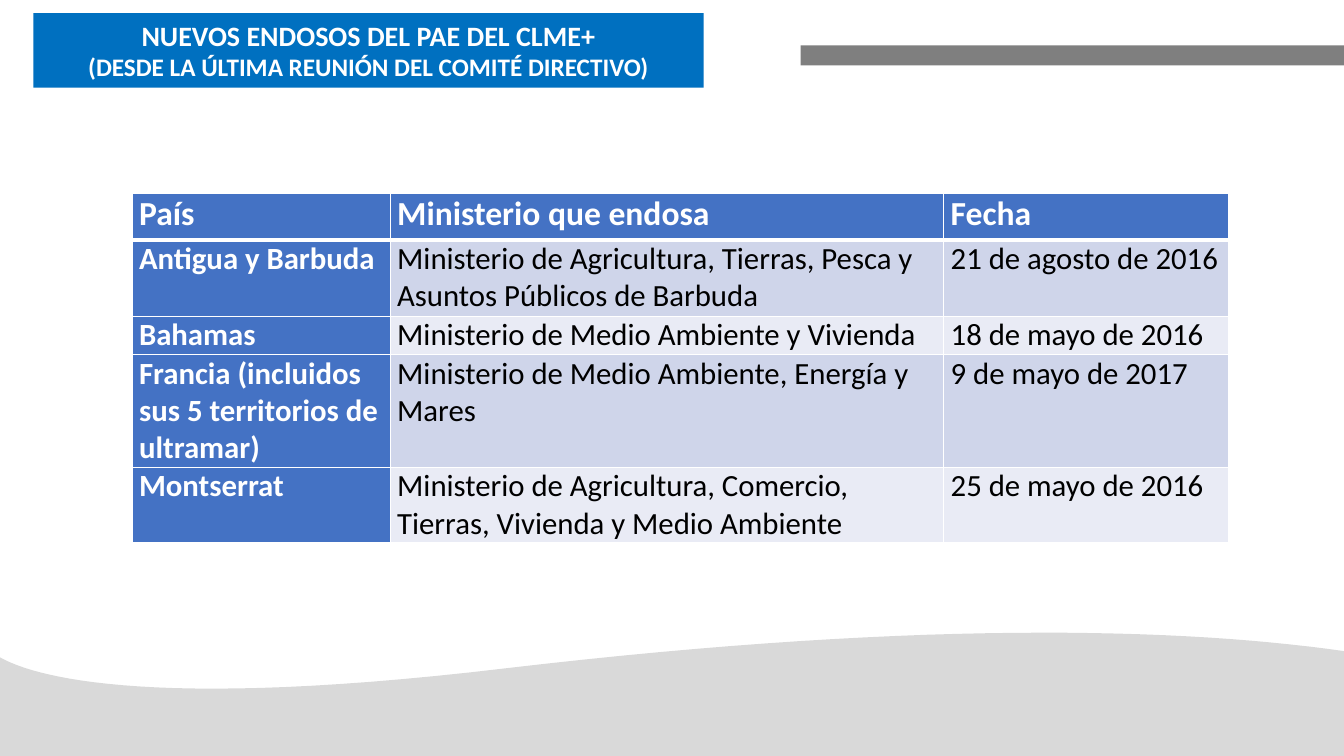
from lxml import etree
from pptx import Presentation
from pptx.dml.color import RGBColor
from pptx.enum.shapes import MSO_SHAPE
from pptx.enum.text import MSO_ANCHOR, PP_ALIGN
from pptx.oxml.ns import qn
from pptx.util import Inches, Pt

TITLE = [("NUEVOS ENDOSOS DEL PAE DEL CLME+", 20),
         ("(DESDE LA ÚLTIMA REUNIÓN DEL COMITÉ DIRECTIVO)", 18)]
ROWS = [
    ("País", "Ministerio que endosa", "Fecha"),
    ("Antigua y Barbuda",
     "Ministerio de Agricultura, Tierras, Pesca y Asuntos Públicos de Barbuda",
     "21 de agosto de 2016"),
    ("Bahamas", "Ministerio de Medio Ambiente y Vivienda", "18 de mayo de 2016"),
    ("Francia (incluidos sus 5 territorios de ultramar)",
     "Ministerio de Medio Ambiente, Energía y Mares", "9 de mayo de 2017"),
    ("Montserrat",
     "Ministerio de Agricultura, Comercio, Tierras, Vivienda y Medio Ambiente",
     "25 de mayo de 2016"),
]
COL_WIDTHS = [2.56, 5.49, 2.83]
ROW_HEIGHTS = [0.46, 0.76, 0.38, 1.12, 0.74]
WAVE_CURVES = [
    [(13.33, 6.46), (11.65, 6.22), (9.02, 6.16), (5.02, 6.63)],
    [(5.02, 6.63), (1.33, 7.07), (0.26, 6.68), (-0.02, 6.51)],
]
WAVE_STEPS = 30

FONT = "Calibri"
WHITE = RGBColor(0xFF, 0xFF, 0xFF)
BLACK = RGBColor(0x00, 0x00, 0x00)
TITLE_BLUE = RGBColor(0x00, 0x70, 0xC0)
TABLE_BLUE = RGBColor(0x44, 0x72, 0xC4)
BANDS = [RGBColor(0xE9, 0xEB, 0xF5), RGBColor(0xCF, 0xD5, 0xEA)]
WAVE_GRAY = RGBColor(0xD9, 0xD9, 0xD9)
BAR_GRAY = RGBColor(0x7F, 0x7F, 0x7F)


def paint(shape, color):
    shape.shadow.inherit = False
    shape.fill.solid()
    shape.fill.fore_color.rgb = color
    shape.line.fill.background()


def add_rect(s, left, top, width, height, color):
    rect = s.shapes.add_shape(MSO_SHAPE.RECTANGLE, Inches(left), Inches(top),
                              Inches(width), Inches(height))
    paint(rect, color)
    return rect


def add_run(p, text, size, color, bold):
    r = p.add_run()
    r.text = text
    r.font.name, r.font.size, r.font.bold = FONT, Pt(size), bold
    r.font.color.rgb = color


def bezier(points, t):
    weights = [(1 - t) ** 3, 3 * t * (1 - t) ** 2, 3 * t ** 2 * (1 - t), t ** 3]
    return tuple(sum(w * pt[axis] for w, pt in zip(weights, points)) for axis in (0, 1))


def add_wave(s):
    edge = [bezier(curve, i / WAVE_STEPS)
            for curve in WAVE_CURVES for i in range(WAVE_STEPS + 1)]
    builder = s.shapes.build_freeform(Inches(13.33), Inches(7.5))
    builder.add_line_segments([(Inches(x), Inches(y)) for x, y in edge + [(-0.02, 7.5)]])
    paint(builder.convert_to_shape(), WAVE_GRAY)


def set_borders(cell, widths):
    tc_pr = cell._tc.get_or_add_tcPr()
    for side, width in widths.items():
        ln = etree.SubElement(tc_pr, qn(f"a:ln{side}"), w=str(Pt(width)))
        fill = etree.SubElement(ln, qn("a:solidFill"))
        etree.SubElement(fill, qn("a:srgbClr"), val=str(WHITE))


def add_endorsements(s):
    frame = s.shapes.add_table(len(ROWS), len(COL_WIDTHS), Inches(1.31), Inches(1.92),
                               Inches(sum(COL_WIDTHS)), Inches(sum(ROW_HEIGHTS)))
    table = frame.table
    table.first_col = True
    for col, width in zip(table.columns, COL_WIDTHS):
        col.width = Inches(width)
    for row, height in zip(table.rows, ROW_HEIGHTS):
        row.height = Inches(height)
    for i, row in enumerate(ROWS):
        for j, text in enumerate(row):
            cell = table.cell(i, j)
            heading = i == 0 or j == 0
            cell.margin_left = cell.margin_right = Inches(0.07)
            cell.margin_top = cell.margin_bottom = 0
            set_borders(cell, {"L": 1, "R": 1, "T": 3 if i == 1 else 1,
                               "B": 3 if i == 0 else 1})
            cell.fill.solid()
            cell.fill.fore_color.rgb = TABLE_BLUE if heading else BANDS[i % 2]
            add_run(cell.text_frame.paragraphs[0], text, 24 if i == 0 else 22,
                    WHITE if heading else BLACK, heading)


def add_title(s):
    tf = add_rect(s, 0.33, 0.13, 6.65, 0.74, TITLE_BLUE).text_frame
    tf.word_wrap = True
    tf.vertical_anchor = MSO_ANCHOR.TOP
    for i, (text, size) in enumerate(TITLE):
        p = tf.add_paragraph() if i else tf.paragraphs[0]
        p.alignment = PP_ALIGN.CENTER
        add_run(p, text, size, WHITE, True)


def main():
    prs = Presentation()
    prs.slide_width, prs.slide_height = Inches(13.33), Inches(7.5)
    s = prs.slides.add_slide(prs.slide_layouts[6])
    add_wave(s)
    add_rect(s, 7.94, 0.45, 5.4, 0.2, BAR_GRAY)
    add_endorsements(s)
    add_title(s)
    prs.save("out.pptx")


if __name__ == "__main__":
    main()
